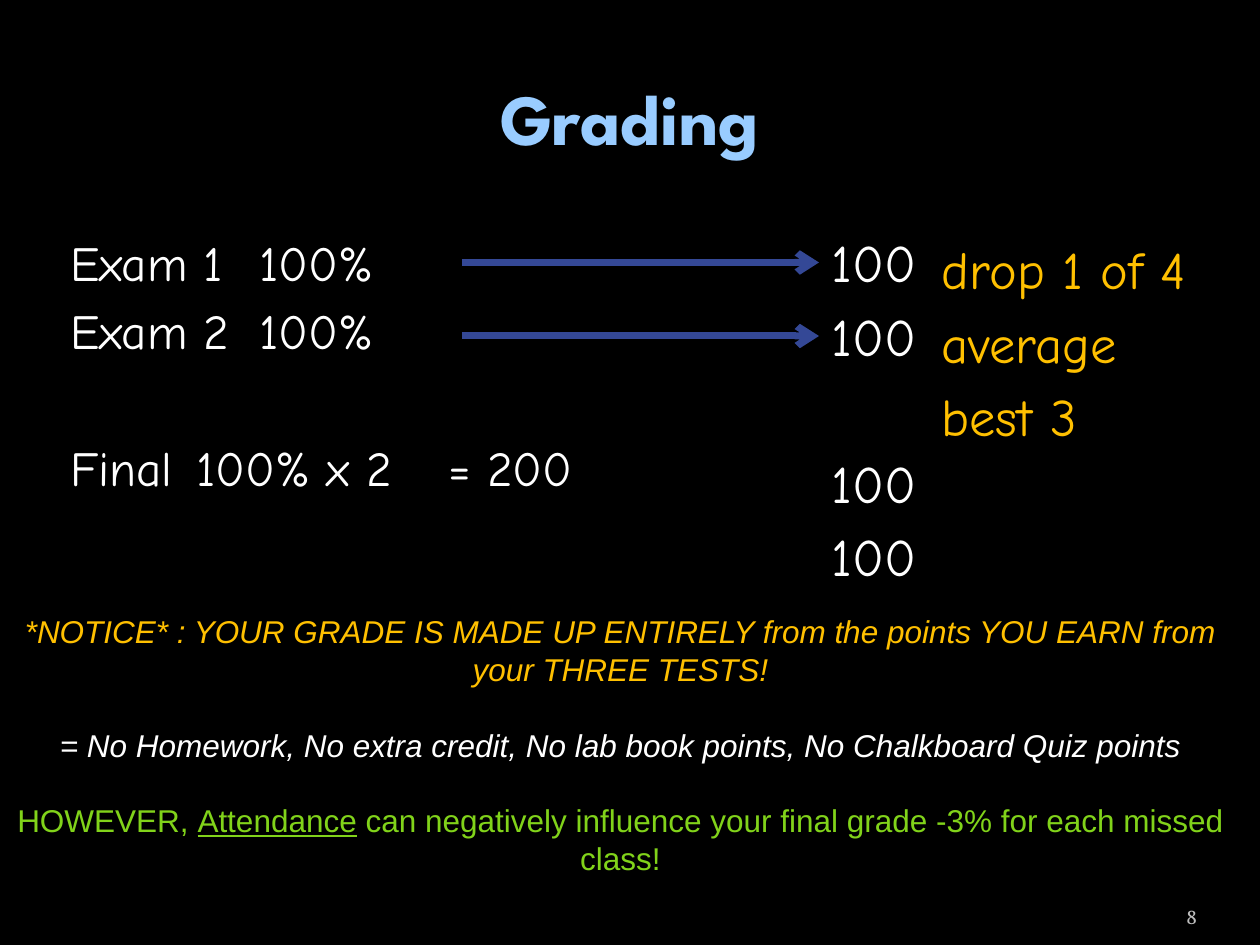
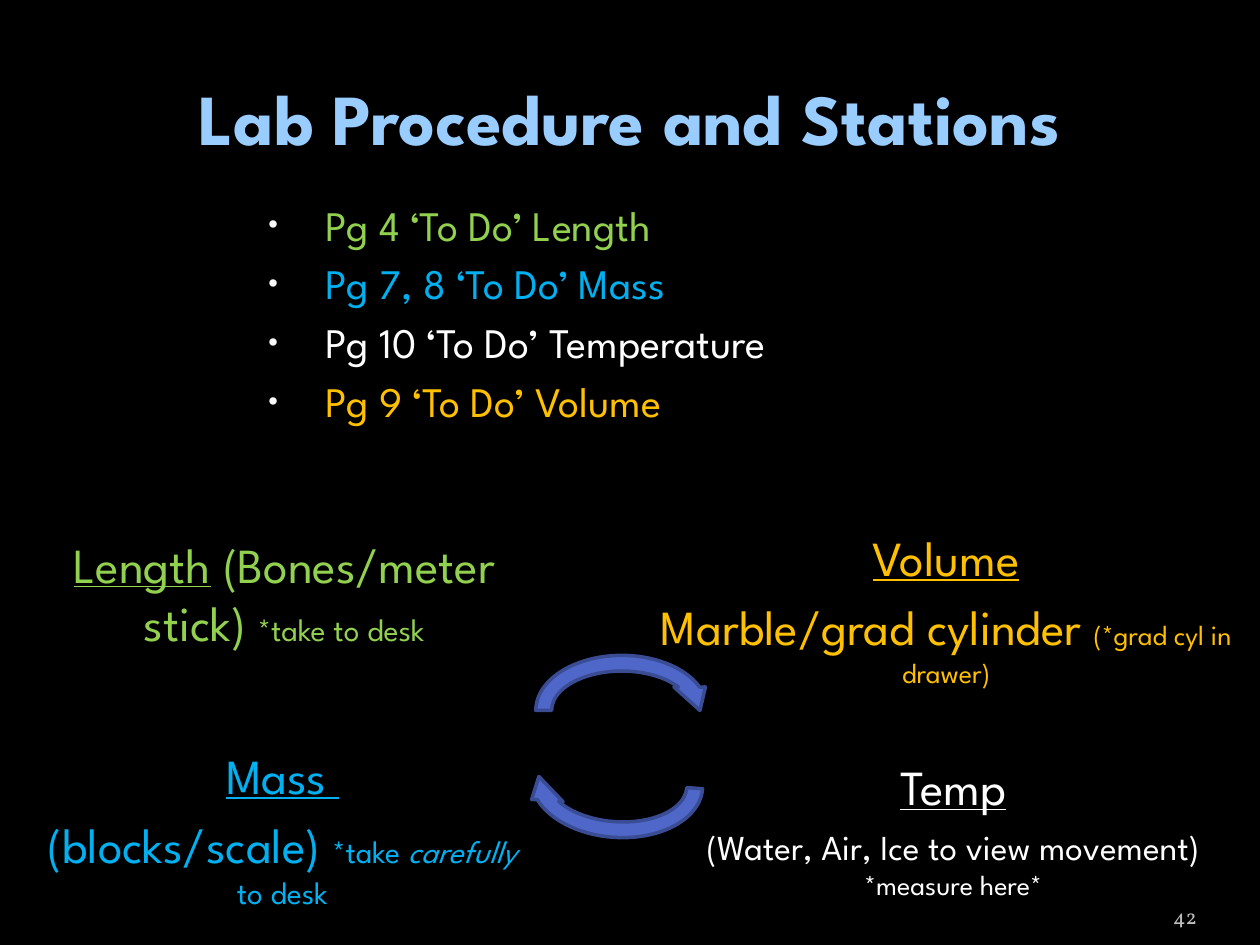
from lxml import etree
from pptx import Presentation
from pptx.dml.color import RGBColor
from pptx.enum.shapes import MSO_CONNECTOR, MSO_SHAPE
from pptx.enum.text import MSO_ANCHOR, MSO_AUTO_SIZE, PP_ALIGN
from pptx.oxml.ns import qn
from pptx.util import Pt

LEFT, CENTER, RIGHT = PP_ALIGN.LEFT, PP_ALIGN.CENTER, PP_ALIGN.RIGHT
MIDDLE, BOTTOM = MSO_ANCHOR.MIDDLE, MSO_ANCHOR.BOTTOM
STRAIGHT = MSO_CONNECTOR.STRAIGHT
CIRCULAR_ARROW = MSO_SHAPE.CIRCULAR_ARROW

BLACK = RGBColor(0x00, 0x00, 0x00)
WHITE = RGBColor(0xFF, 0xFF, 0xFF)
GRAY = RGBColor(0xBD, 0xBD, 0xBD)
PALE_BLUE = RGBColor(0x99, 0xCC, 0xFF)
SKY = RGBColor(0x00, 0xB0, 0xF0)
AMBER = RGBColor(0xFF, 0xC0, 0x00)
GREEN = RGBColor(0x92, 0xD0, 0x50)
LIME = RGBColor(0x81, 0xD3, 0x1A)
ARROW_BLUE = RGBColor(0x34, 0x48, 0x96)
CYCLE_FILL = RGBColor(0x4E, 0x67, 0xC8)
CYCLE_LINE = RGBColor(0x3A, 0x4C, 0x94)

HEADING, HAND, PLAIN, NUMERAL = "League Spartan", "Comic Neue", "Arial", "Vollkorn"


def write(shape, font, paragraphs, align=LEFT, gap=0.2):
    """Fill a shape with paragraphs of (text, size, colour, style) runs.

    gap is the space between paragraphs as a share of the text size.
    Style letters are b, i and u. Returns the paragraphs written.
    """
    frame = shape.text_frame
    frame.word_wrap = True
    frame.auto_size = MSO_AUTO_SIZE.NONE
    written = []
    for index, runs in enumerate(paragraphs):
        paragraph = frame.add_paragraph() if index else frame.paragraphs[0]
        size = runs[0][1]
        paragraph.alignment = align
        paragraph.space_before = Pt(round(gap * size, 1) if index else 0)
        if all(run[1] == size for run in runs):
            paragraph.line_spacing = Pt(round(1.2 * size, 1))
        for text, run_size, color, style in runs:
            run = paragraph.add_run()
            run.text = text
            run.font.name = font
            run.font.size = Pt(run_size)
            run.font.color.rgb = color
            run.font.bold = "b" in style
            run.font.italic = "i" in style
            run.font.underline = "u" in style
        written.append(paragraph)
    return written


def add_titled_slide(title, number, body_box):
    """Add a slide with its title, number and placed body."""
    slide = prs.slides.add_slide(prs.slide_layouts[1])
    heading, body = slide.placeholders
    heading.left, heading.top, heading.width, heading.height = Pt(36), Pt(21.6), Pt(648), Pt(90)
    heading.text_frame.vertical_anchor = MIDDLE
    write(heading, HEADING, [[(title, 41, PALE_BLUE, "b")]], CENTER)
    body.left, body.top, body.width, body.height = map(Pt, body_box)

    page = slide.shapes.add_textbox(Pt(624), Pt(505.4), Pt(60), Pt(28.8))
    page.text_frame.margin_left = page.text_frame.margin_right = 0
    page.text_frame.vertical_anchor = BOTTOM
    write(page, NUMERAL, [[(number, 12, GRAY, "")]], RIGHT)
    return slide, body


prs = Presentation()
prs.slide_width, prs.slide_height = Pt(720), Pt(540)
background = prs.slide_master.background.fill
background.solid()
background.fore_color.rgb = BLACK

# Grading
slide, body = add_titled_slide("Grading", "8", (33, 129, 400, 180))
exams = ["Exam 1\t100%", "Exam 2\t100%", "Final\t100% x 2\t= 200"]
exam_tabs = [(141,), (141,), (78.5, 210)]
exam_lines = write(body, HAND, [[(exam, 28, WHITE, "")] for exam in exams])
for line, stops in zip(exam_lines, exam_tabs):
    properties = line._p.get_or_add_pPr()
    properties.set("marL", "0")
    properties.set("indent", "0")
    etree.SubElement(properties, qn("a:buNone"))
    tab_list = etree.SubElement(properties, qn("a:tabLst"))
    for stop in stops:
        etree.SubElement(tab_list, qn("a:tab"), pos=str(Pt(stop)), algn="l")
exam_lines[2].space_before = Pt(44.8)

scores = slide.shapes.add_textbox(Pt(468), Pt(128), Pt(72), Pt(216))
score_lines = write(scores, HAND, [[("100", 30, WHITE, "")]] * 4)
score_lines[2].space_before = Pt(48)

drop_rule = slide.shapes.add_textbox(Pt(531), Pt(132), Pt(183), Pt(132))
write(drop_rule, HAND,
      [[(text, 30, AMBER, "")] for text in ("drop 1 of 4", "average", "best 3")])

for y in (150, 192):
    arrow = slide.shapes.add_connector(STRAIGHT, Pt(264), Pt(y), Pt(468), Pt(y))
    arrow.line.color.rgb = ARROW_BLUE
    arrow.line.width = Pt(4)
    etree.SubElement(arrow.line._get_or_add_ln(), qn("a:tailEnd"), type="arrow")
    etree.SubElement(arrow._element.spPr, qn("a:effectLst"))

notice = slide.shapes.add_textbox(Pt(1.4), Pt(346.3), Pt(706.3), Pt(160))
write(notice, PLAIN, [
    [("*NOTICE* : YOUR GRADE IS MADE UP ENTIRELY from the points YOU EARN "
      "from your THREE TESTS!", 18, AMBER, "i")],
    [("= No Homework, No extra credit, No lab book points, "
      "No Chalkboard Quiz points", 18, WHITE, "i")],
    [("HOWEVER, ", 18, LIME, ""), ("Attendance", 18, LIME, "u"),
     (" can negatively influence your final grade -3% for each missed class!", 18, LIME, "")],
], CENTER, gap=1.2)

# Lab Procedure and Stations
slide, body = add_titled_slide("Lab Procedure and Stations", "42", (135.4, 110.2, 408, 168))
tasks = [
    ("Pg 4 ‘To Do’ Length", GREEN),
    ("Pg 7, 8 ‘To Do’ Mass", SKY),
    ("Pg 10 ‘To Do’ Temperature", WHITE),
    ("Pg 9 ‘To Do’ Volume", AMBER),
]
for line in write(body, HEADING, [[(task, 24, color, "")] for task, color in tasks]):
    properties = line._p.get_or_add_pPr()
    properties.set("marL", str(Pt(43.2)))
    properties.set("indent", str(Pt(-32.4)))
    bullet_color = etree.SubElement(properties, qn("a:buClr"))
    etree.SubElement(bullet_color, qn("a:srgbClr"), val="F9F9F9")
    etree.SubElement(properties, qn("a:buSzPct"), val="65000")
    etree.SubElement(properties, qn("a:buFont"), typeface=PLAIN)
    etree.SubElement(properties, qn("a:buChar"), char="•")

stations = [
    ((361.4, 298, 358.6, 101.5), [
        [("Volume", 28, AMBER, "u")],
        [("Marble/grad cylinder ", 28, AMBER, ""), ("(*grad cyl in drawer)", 16, AMBER, "")],
    ]),
    ((16.7, 301.7, 291.5, 80), [
        [("Length", 28, GREEN, "u"), (" (Bones/meter stick) ", 28, GREEN, ""),
         ("*take to desk", 18, GREEN, "")],
    ]),
    ((381.7, 429, 326, 90), [
        [("Temp", 28, WHITE, "u")],
        [("(Water, Air, Ice to view movement) ", 20, WHITE, ""),
         ("*measure here*", 16, WHITE, "")],
    ]),
    ((14.5, 422.6, 293.6, 104), [
        [("Mass ", 28, SKY, "u")],
        [("(blocks/scale) ", 28, SKY, ""), ("*take ", 18, SKY, ""),
         ("carefully", 18, SKY, "i"), (" to desk", 18, SKY, "")],
    ]),
]
for box, lines in stations:
    station = slide.shapes.add_textbox(*map(Pt, box))
    for line, space in zip(write(station, HEADING, lines, CENTER), (0, 5.6)):
        line.space_before = Pt(space)

for left, top, turn in ((301.7, 370, 0), (298.8, 411, 184.3)):
    cycle = slide.shapes.add_shape(CIRCULAR_ARROW, Pt(left), Pt(top), Pt(107.3), Pt(72))
    cycle.rotation = turn
    cycle.shadow.inherit = False
    cycle.fill.solid()
    cycle.fill.fore_color.rgb = CYCLE_FILL
    cycle.line.color.rgb = CYCLE_LINE
    cycle.line.width = Pt(2)

prs.save("out.pptx")
